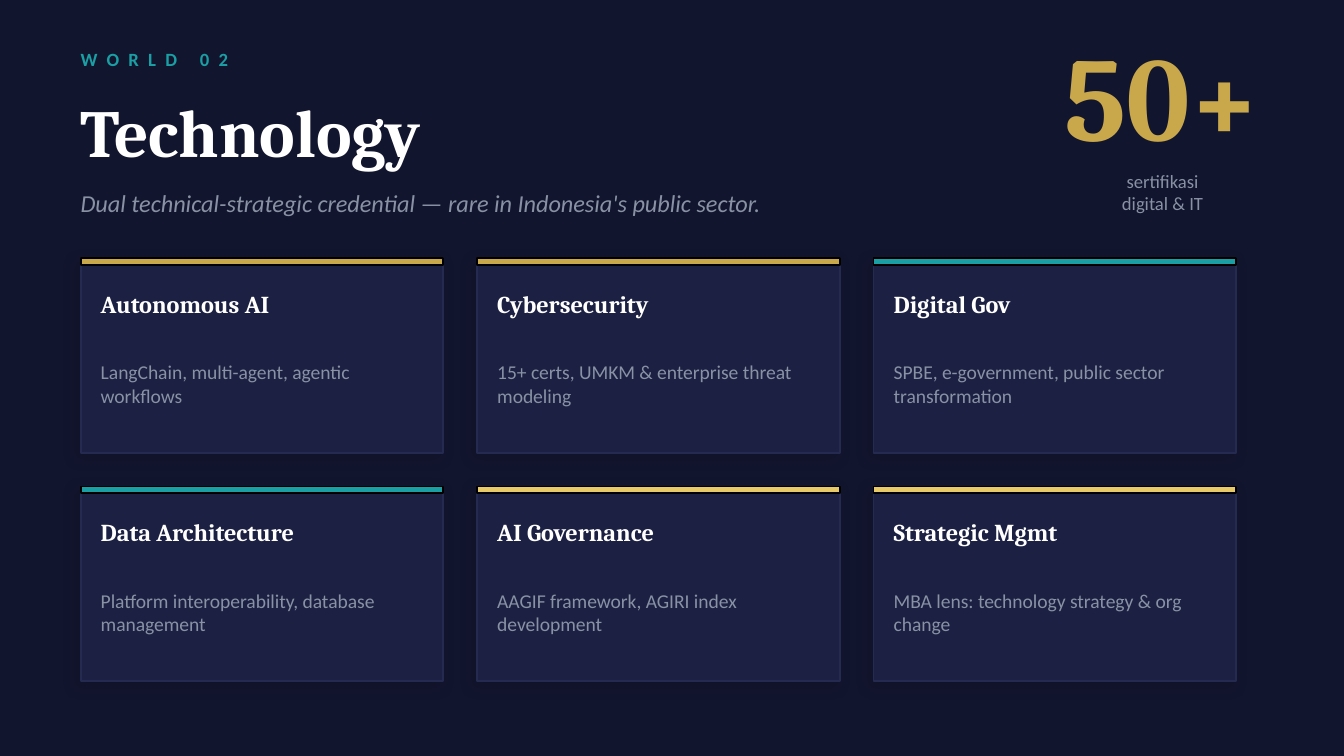
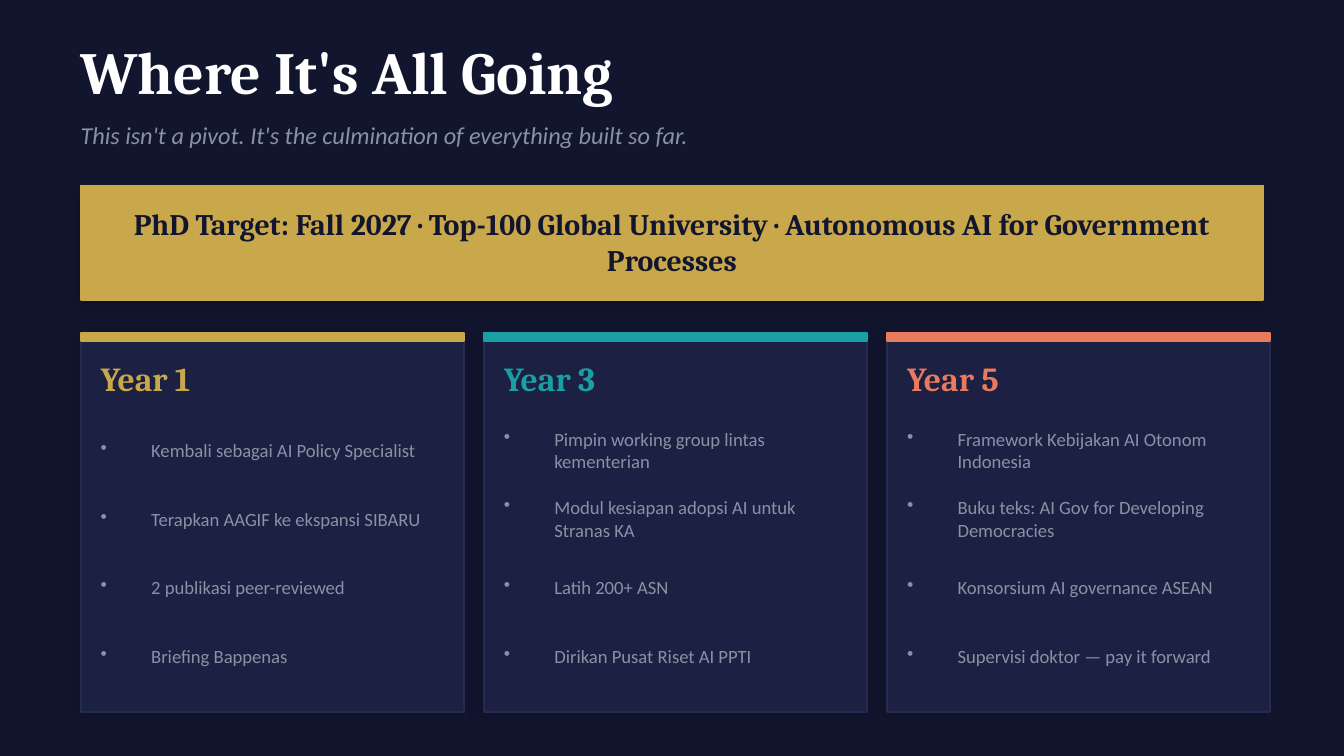
from lxml import etree
from pptx import Presentation
from pptx.dml.color import RGBColor
from pptx.enum.shapes import MSO_SHAPE as Preset
from pptx.enum.text import MSO_ANCHOR as Anchor, PP_ALIGN as Align
from pptx.oxml.ns import qn
from pptx.util import Pt

NAVY, PANEL, EDGE, BLACK = "12152E", "1C2042", "252A50", "000000"
GOLD, LIGHT_GOLD, TEAL, CORAL = "C9A84C", "E8C96A", "1A9FA4", "E87A5D"
WHITE, GREY = "FFFFFF", "8892A4"
SERIF, SANS = "Cambria", "Calibri"
MARGIN, INSET = 43.2, 10.8
BULLET_INDENT = 27

SKILLS = [
    ("Autonomous AI", "LangChain, multi-agent, agentic workflows", GOLD),
    ("Cybersecurity", "15+ certs, UMKM & enterprise threat modeling", GOLD),
    ("Digital Gov", "SPBE, e-government, public sector transformation", TEAL),
    ("Data Architecture", "Platform interoperability, database management", TEAL),
    ("AI Governance", "AAGIF framework, AGIRI index development", LIGHT_GOLD),
    ("Strategic Mgmt", "MBA lens: technology strategy & org change", LIGHT_GOLD),
]
MILESTONES = [
    ("Year 1", GOLD, [
        "Kembali sebagai AI Policy Specialist",
        "Terapkan AAGIF ke ekspansi SIBARU",
        "2 publikasi peer-reviewed",
        "Briefing Bappenas",
    ]),
    ("Year 3", TEAL, [
        "Pimpin working group lintas kementerian",
        "Modul kesiapan adopsi AI untuk Stranas KA",
        "Latih 200+ ASN",
        "Dirikan Pusat Riset AI PPTI",
    ]),
    ("Year 5", CORAL, [
        "Framework Kebijakan AI Otonom Indonesia",
        "Buku teks: AI Gov for Developing Democracies",
        "Konsorsium AI governance ASEAN",
        "Supervisi doktor — pay it forward",
    ]),
]


def color(value):
    """Turn a hex string into a colour."""
    return RGBColor.from_string(value)


def add_bullet(paragraph):
    """Give a paragraph a hanging bullet."""
    properties = paragraph._p.get_or_add_pPr()
    properties.set("marL", str(Pt(BULLET_INDENT)))
    properties.set("indent", str(-Pt(BULLET_INDENT)))
    etree.SubElement(properties, qn("a:buChar"), char="•")


def add_text(slide, box, text, *, size, fill=GREY, name=SANS, bold=False,
             italic=False, align=Align.LEFT, spacing=0, bullet=False):
    """Add a middle-anchored text box, one paragraph per line of text."""
    frame = slide.shapes.add_textbox(*map(Pt, box)).text_frame
    frame.word_wrap = True
    frame.vertical_anchor = Anchor.MIDDLE
    frame.margin_left = frame.margin_right = Pt(0)
    frame.margin_top = frame.margin_bottom = Pt(0)
    for index, line in enumerate(text.split("\n")):
        paragraph = frame.add_paragraph() if index else frame.paragraphs[0]
        paragraph.alignment = align
        if bullet:
            add_bullet(paragraph)
        run = paragraph.add_run()
        run.text = line
        font = run.font
        font.size, font.name, font.bold, font.italic = Pt(size), name, bold, italic
        font.color.rgb = color(fill)
        if spacing:
            run._r.get_or_add_rPr().set("spc", str(spacing * 100))


def add_shadow(shape, opacity):
    """Give a shape a soft black shadow with the opacity in percent."""
    effects = shape._element.spPr.find(qn("a:effectLst"))
    shadow = etree.SubElement(effects, qn("a:outerShdw"), blurRad=str(Pt(8)),
                              dist=str(Pt(3)), dir=str(135 * 60000),
                              algn="bl", rotWithShape="0")
    tint = etree.SubElement(shadow, qn("a:srgbClr"), val=BLACK)
    etree.SubElement(tint, qn("a:alpha"), val=str(opacity * 1000))


def add_rectangle(slide, box, fill, line, opacity=0):
    """Add a filled rectangle with a one-point outline."""
    shape = slide.shapes.add_shape(Preset.RECTANGLE, *map(Pt, box))
    shape.shadow.inherit = False
    shape.fill.solid()
    shape.fill.fore_color.rgb = color(fill)
    shape.line.color.rgb = color(line)
    shape.line.width = Pt(1)
    if opacity:
        add_shadow(shape, opacity)


def add_panel(slide, box, accent, accent_line, accent_height, opacity):
    """Add a dark panel with an accent strip along its top."""
    left, top, width, height = box
    add_rectangle(slide, box, PANEL, EDGE, opacity)
    add_rectangle(slide, (left, top, width, accent_height), accent, accent_line)


def add_heading(slide, box, title, title_size, subtitle, subtitle_top, subtitle_width):
    """Add the serif title and the italic line below it."""
    left, top, width, height = box
    add_text(slide, box, title, size=title_size, fill=WHITE, name=SERIF, bold=True)
    add_text(slide, (left, top + subtitle_top, subtitle_width, 21.6), subtitle,
             size=13, italic=True)


def add_statistic(slide, box, figure, caption):
    """Add a large figure above a centred caption."""
    left, top, width, height = box
    add_text(slide, (left, top, width, 68.4), figure, size=64, fill=GOLD,
             name=SERIF, bold=True, align=Align.CENTER)
    add_text(slide, (left, top + height - 36, width, 36), caption, size=10,
             align=Align.CENTER)


def add_skill_card(slide, box, title, description, accent):
    """Add a card with a skill and its short description."""
    left, top, width, height = box
    add_panel(slide, box, accent, BLACK, 3.6, 12)
    inner_left, inner_width = left + INSET, width - 2 * INSET
    add_text(slide, (inner_left, top + INSET, inner_width, 27.36), title,
             size=13, fill=WHITE, name=SERIF, bold=True)
    add_text(slide, (inner_left, top + 40.32, inner_width, 54), description, size=10.5)


def add_banner(slide, box, text):
    """Add the gold banner with its centred statement."""
    left, top, width, height = box
    add_rectangle(slide, box, GOLD, GOLD, 20)
    add_text(slide, (left + 7.2, top + 5.04, width - 14.4, height - 10.8), text,
             size=16, fill=NAVY, name=SERIF, bold=True, align=Align.CENTER)


def add_milestone_card(slide, box, title, accent, goals):
    """Add a card with a year and its bulleted goals."""
    left, top, width, height = box
    add_panel(slide, box, accent, accent, 4.32, 15)
    inner_left = left + INSET
    add_text(slide, (inner_left, top + 8.64, width - 2 * INSET, 30.24), title,
             size=18, fill=accent, name=SERIF, bold=True)
    for index, goal in enumerate(goals):
        goal_top = top + 46.08 + index * 36.72
        add_text(slide, (inner_left, goal_top, width - 18, 33.12), goal,
                 size=10, bullet=True)


def add_slide(presentation):
    """Add a blank slide with the navy background."""
    slide = presentation.slides.add_slide(presentation.slide_layouts[6])
    slide.background.fill.solid()
    slide.background.fill.fore_color.rgb = color(NAVY)
    return slide


def build_technology(presentation):
    """Build the slide with the grid of technology skills."""
    slide = add_slide(presentation)
    add_text(slide, (MARGIN, 21.6, 288, 20.16), "WORLD 02", size=10, fill=TEAL,
             bold=True, spacing=5)
    add_heading(slide, (MARGIN, 44.64, 432, 50.4), "Technology", 36,
                "Dual technical-strategic credential — rare in Indonesia's public sector.",
                53.28, 504)
    add_statistic(slide, (547.2, 15.84, 151.2, 105.12), "50+",
                  "sertifikasi\ndigital & IT")
    width, height, gap = 194.4, 104.4, 18
    for index, skill in enumerate(SKILLS):
        row, column = divmod(index, 3)
        box = (MARGIN + column * (width + gap), 138.24 + row * (height + gap),
               width, height)
        add_skill_card(slide, box, *skill)


def build_roadmap(presentation):
    """Build the slide with the target banner and yearly milestones."""
    slide = add_slide(presentation)
    add_heading(slide, (MARGIN, 18, 633.6, 39.6), "Where It's All Going", 32,
                "This isn't a pivot. It's the culmination of everything built so far.",
                43.2, 633.6)
    add_banner(slide, (MARGIN, 99.36, 633.6, 61.2),
               "PhD Target: Fall 2027 · Top-100 Global University · "
               "Autonomous AI for Government Processes")
    width, gap = 205.2, 10.8
    for index, milestone in enumerate(MILESTONES):
        box = (MARGIN + index * (width + gap), 178.56, width, 203.04)
        add_milestone_card(slide, box, *milestone)


def main():
    """Build and save the presentation."""
    presentation = Presentation()
    presentation.slide_width, presentation.slide_height = Pt(720), Pt(405)
    build_technology(presentation)
    build_roadmap(presentation)
    presentation.save("out.pptx")


if __name__ == "__main__":
    main()
